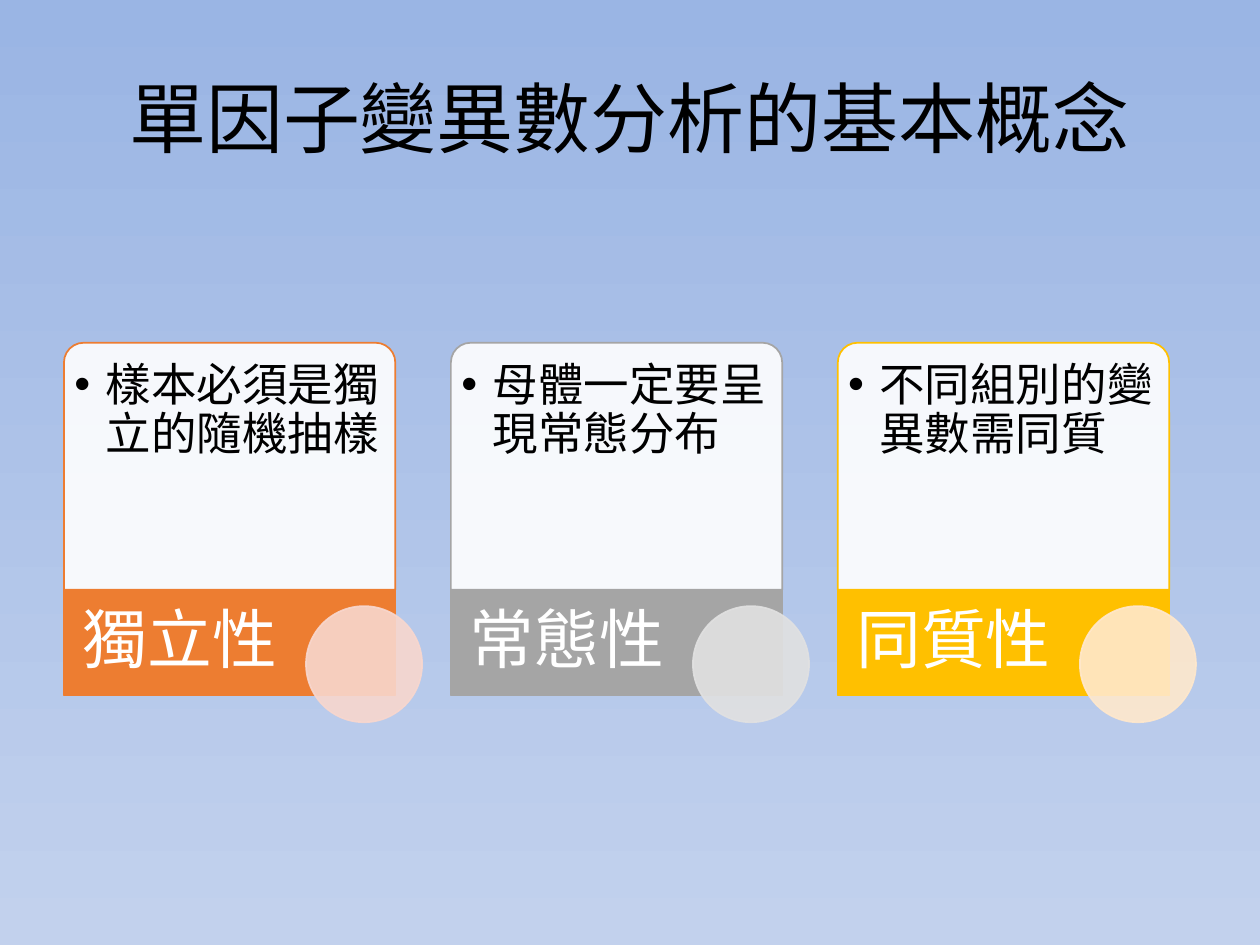
import pptx
import pptx.util
import pptx.dml.color
import pptx.enum.shapes
import pptx.enum.text
import pptx.oxml.ns
from lxml import etree

Cm, Pt = pptx.util.Cm, pptx.util.Pt
RGB = pptx.dml.color.RGBColor
SHAPE = pptx.enum.shapes.MSO_SHAPE
ANCHOR = pptx.enum.text.MSO_ANCHOR
ALIGN = pptx.enum.text.PP_ALIGN
qn = pptx.oxml.ns.qn

FONT = "Noto Sans CJK SC"
BLACK, WHITE = RGB(0, 0, 0), RGB(255, 255, 255)
SKY_TOP, SKY_BOTTOM = RGB(0x9A, 0xB5, 0xE4), RGB(0xC2, 0xD1, 0xED)
ORANGE, PEACH = RGB(0xED, 0x7D, 0x31), RGB(0xF8, 0xD7, 0xCE)
GREY, SILVER = RGB(0xA5, 0xA5, 0xA5), RGB(0xE1, 0xE1, 0xE1)
GOLD, CREAM = RGB(0xFF, 0xC0, 0x00), RGB(0xFF, 0xE8, 0xCC)

TITLE = "單因子變異數分析的基本概念"
CARDS = [
    ("獨立性", "樣本必須是獨立的隨機抽樣", ORANGE, PEACH),
    ("常態性", "母體一定要呈現常態分布", GREY, SILVER),
    ("同質性", "不同組別的變異數需同質", GOLD, CREAM),
]

# Card geometry in centimetres
LEFT, PITCH, WIDTH = 1.29, 7.8, 6.68
TOP, BODY_H, BAND_H = 6.91, 4.98, 2.13
BAND_TOP = TOP + BODY_H
INSET = 0.11
CIRCLE, CIRCLE_DX, CIRCLE_DY = 2.34, 4.88, 0.33


def write(shape, text, size, color=BLACK, align=ALIGN.LEFT, anchor=ANCHOR.TOP,
          margins=(0.25, 0.13, 0.25, 0.13), spacing=None, bullet=False):
    tf = shape.text_frame
    tf.word_wrap = True
    tf.vertical_anchor = anchor
    tf.margin_left, tf.margin_top, tf.margin_right, tf.margin_bottom = map(Cm, margins)
    p = tf.paragraphs[0]
    p.alignment = align
    if spacing:
        p.line_spacing = spacing
    if bullet:
        pPr = p._p.get_or_add_pPr()
        pPr.set("marL", str(Cm(0.63)))
        pPr.set("indent", str(-Cm(0.63)))
        etree.SubElement(pPr, qn("a:buFont")).set("typeface", "Arial")
        etree.SubElement(pPr, qn("a:buChar")).set("char", "•")
    r = p.add_run()
    r.text = text
    r.font.name, r.font.size, r.font.color.rgb = FONT, Pt(size), color
    etree.SubElement(r._r.get_or_add_rPr(), qn("a:ea")).set("typeface", FONT)


def set_opacity(fill_parent, percent):
    color = fill_parent.find(qn("a:solidFill")).find(qn("a:srgbClr"))
    etree.SubElement(color, qn("a:alpha")).set("val", str(percent * 1000))


def add_block(s, kind, box, fill, line, fill_opacity=100, line_opacity=100):
    sp = s.shapes.add_shape(kind, *map(Cm, box))
    sp.shadow.inherit = False
    sp.fill.solid()
    sp.fill.fore_color.rgb = fill
    sp.line.color.rgb = line
    sp.line.width = Pt(1)
    spPr = sp._element.spPr
    if fill_opacity < 100:
        set_opacity(spPr, fill_opacity)
    if line_opacity < 100:
        set_opacity(spPr.find(qn("a:ln")), line_opacity)
    return sp


def add_card(s, x, name, detail, color, tint):
    body = add_block(s, SHAPE.ROUND_2_SAME_RECTANGLE, (x, TOP, WIDTH, BODY_H),
                     WHITE, color, fill_opacity=90)
    body.adjustments[0], body.adjustments[1] = 0.08, 0
    tb = s.shapes.add_textbox(Cm(x + INSET), Cm(TOP + INSET),
                              Cm(WIDTH - 2 * INSET), Cm(BODY_H - INSET))
    write(tb, detail, 26, margins=(0.1, 0.28, 0.1, 0.1), spacing=0.9, bullet=True)

    add_block(s, SHAPE.RECTANGLE, (x, BAND_TOP, WIDTH, BAND_H), color, color)
    tb = s.shapes.add_textbox(Cm(x), Cm(BAND_TOP), Cm(4.7), Cm(BAND_H))
    write(tb, name, 37, color=WHITE, anchor=ANCHOR.MIDDLE,
          margins=(0.38, 0, 0.13, 0), spacing=0.9)

    add_block(s, SHAPE.OVAL, (x + CIRCLE_DX, BAND_TOP + CIRCLE_DY, CIRCLE, CIRCLE),
              tint, tint, fill_opacity=90, line_opacity=90)


def main():
    prs = pptx.Presentation()
    prs.slide_width, prs.slide_height = Cm(25.4), Cm(19.05)
    s = prs.slides.add_slide(prs.slide_layouts[5])

    fill = s.background.fill
    fill.gradient()
    fill.gradient_angle = 270
    for stop, color, position in zip(fill.gradient_stops, (SKY_TOP, SKY_BOTTOM), (0, 1)):
        stop.color.rgb, stop.position = color, position

    title = s.shapes.title
    title.left, title.top, title.width, title.height = map(Cm, (1.27, 0.76, 22.86, 3.18))
    write(title, TITLE, 44, align=ALIGN.CENTER, anchor=ANCHOR.MIDDLE)

    for i, card in enumerate(CARDS):
        add_card(s, LEFT + i * PITCH, *card)

    prs.save("out.pptx")


if __name__ == "__main__":
    main()
